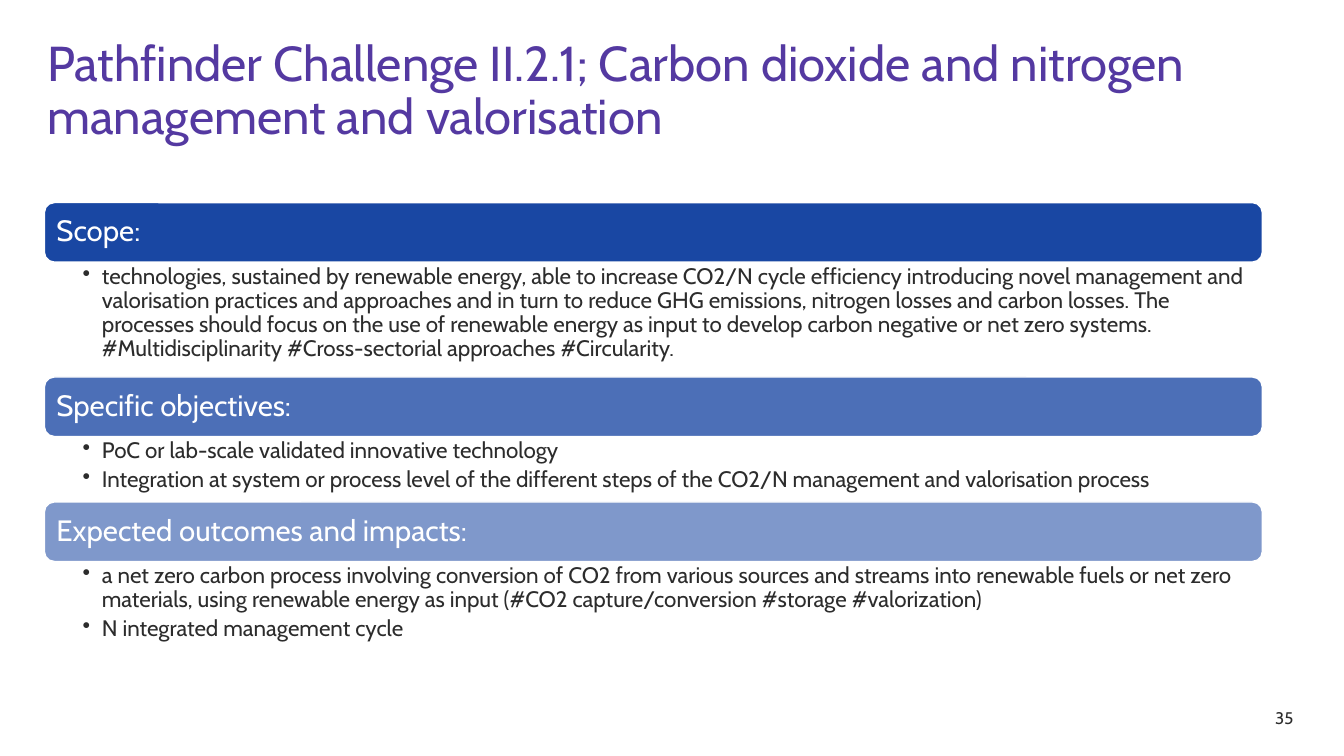
import pptx
import pptx.dml.color
import pptx.enum.shapes
import pptx.enum.text
import pptx.oxml.ns
import pptx.util
from lxml import etree

Inches = pptx.util.Inches
Pt = pptx.util.Pt
Anchor = pptx.enum.text.MSO_ANCHOR
Align = pptx.enum.text.PP_ALIGN

BAR = 0.59
LEFT, WIDTH = 0.44, 12.08
SECTIONS = [
    ("Scope:", 90, 1.14, [
        "technologies, sustained by renewable energy, able to increase CO2/N cycle "
        "efficiency introducing novel management and valorisation practices and "
        "approaches and in turn to reduce GHG emissions, nitrogen losses and carbon "
        "losses. The processes should focus on the use of renewable energy as input "
        "to develop carbon negative or net zero systems. #Multidisciplinarity "
        "#Cross-sectorial approaches #Circularity.",
    ]),
    ("Specific objectives:", 70, 0.65, [
        "PoC or lab-scale validated innovative technology",
        "Integration at system or process level of the different steps of the CO2/N "
        "management and valorisation process",
    ]),
    ("Expected outcomes and impacts:", 50, 0.93, [
        "a net zero carbon process involving conversion of CO2 from various sources "
        "and streams into renewable fuels or net zero materials, using renewable "
        "energy as input (#CO2 capture/conversion #storage #valorization)",
        "N integrated management cycle",
    ]),
]


def shade(code):
    return pptx.dml.color.RGBColor.from_string(code)


def apply(target, values):
    for name, value in values.items():
        setattr(target, name, value)


def child(parent, tag, **values):
    """Append a DrawingML element with the given attributes."""
    return etree.SubElement(parent, pptx.oxml.ns.qn(tag), **values)


class Deck:
    font = "Cabin"
    ink = "2C2C2C"
    blue = "003399"
    white = "FFFFFF"
    violet = "5439A1"

    def __init__(self):
        self.file = pptx.Presentation()
        apply(self.file, {"slide_width": Inches(13.33), "slide_height": Inches(7.5)})
        self.slide = self.file.slides.add_slide(self.file.slide_layouts[6])

    def fill(self, shape, lines, size, color, pads, spacing=0.9, after=0,
             bullet=False, anchor=Anchor.TOP):
        """Fill a shape with paragraphs; pads are left, top, right, bottom."""
        frame = shape.text_frame
        sides = ("margin_left", "margin_top", "margin_right", "margin_bottom")
        apply(frame, {"word_wrap": True, "vertical_anchor": anchor,
                      **dict(zip(sides, map(Inches, pads)))})
        for i, line in enumerate(lines):
            para = frame.add_paragraph() if i else frame.paragraphs[0]
            apply(para, {"text": line, "alignment": Align.LEFT,
                         "line_spacing": spacing, "space_after": Pt(after)})
            if bullet:
                props = para._p.get_or_add_pPr()
                props.set("marL", str(Inches(0.19)))
                props.set("indent", str(Inches(-0.19)))
                child(props, "a:buChar", char="•")
            apply(para.font, {"name": self.font, "size": Pt(size)})
            para.font.color.rgb = shade(color)

    def text(self, box, lines, size, color, pads=(0.1, 0.05, 0.1, 0.05), **style):
        shape = self.slide.shapes.add_textbox(*map(Inches, box))
        self.fill(shape, lines, size, color, pads, **style)

    def bar(self, top, label, alpha):
        """Draw a rounded heading band, alpha in percent."""
        shape = self.slide.shapes.add_shape(
            pptx.enum.shapes.MSO_SHAPE.ROUNDED_RECTANGLE,
            *map(Inches, (LEFT, top, WIDTH, BAR)))
        shape.shadow.inherit = False
        shape.fill.solid()
        shape.fill.fore_color.rgb = shade(self.blue)
        tint = shape._element.spPr.find(".//" + pptx.oxml.ns.qn("a:srgbClr"))
        child(tint, "a:alpha", val=str(alpha * 1000))
        shape.line.color.rgb = shade(self.white)
        shape.line.width = Pt(1)
        self.fill(shape, [label], 21, self.white, (0.09,) * 4, anchor=Anchor.MIDDLE)

    def list(self, top, height, items):
        self.text((LEFT, top, WIDTH, height), items, 16, self.ink,
                  (0.38, 0.03, 0.16, 0.03), after=3.5, bullet=True)


def main():
    deck = Deck()
    deck.text((12.55, 6.97, 0.7, 0.4), ["35"], 12, deck.ink, spacing=1.0)
    deck.text((0.37, 0.34, 12.08, 1.45),
              ["Pathfinder Challenge II.2.1; Carbon dioxide and nitrogen "
               "management and valorisation"], 35, deck.violet)
    top = 2.01
    for label, alpha, height, items in SECTIONS:
        deck.bar(top, label, alpha)
        deck.list(top + BAR, height, items)
        top += BAR + height
    deck.file.save("out.pptx")


if __name__ == "__main__":
    main()
